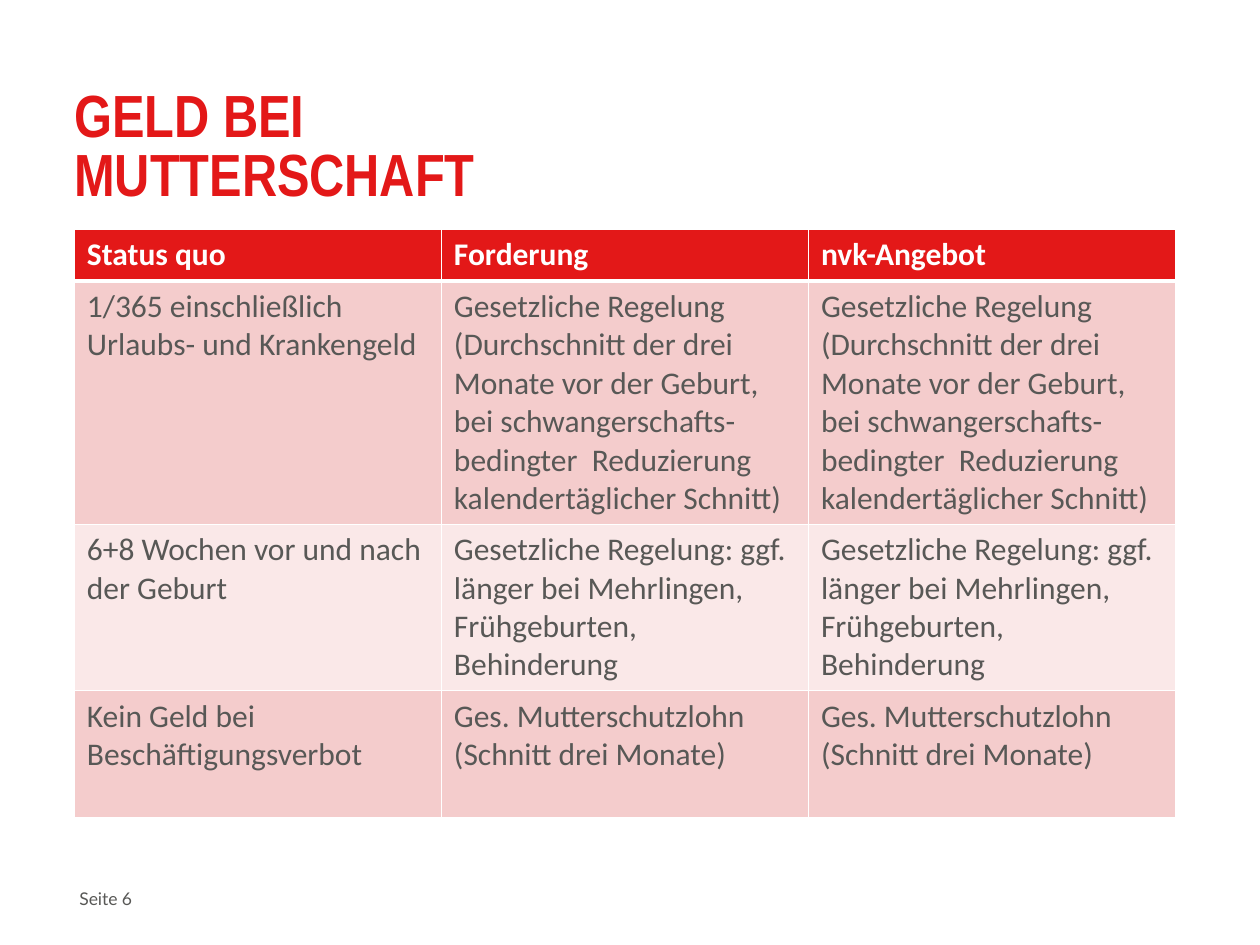
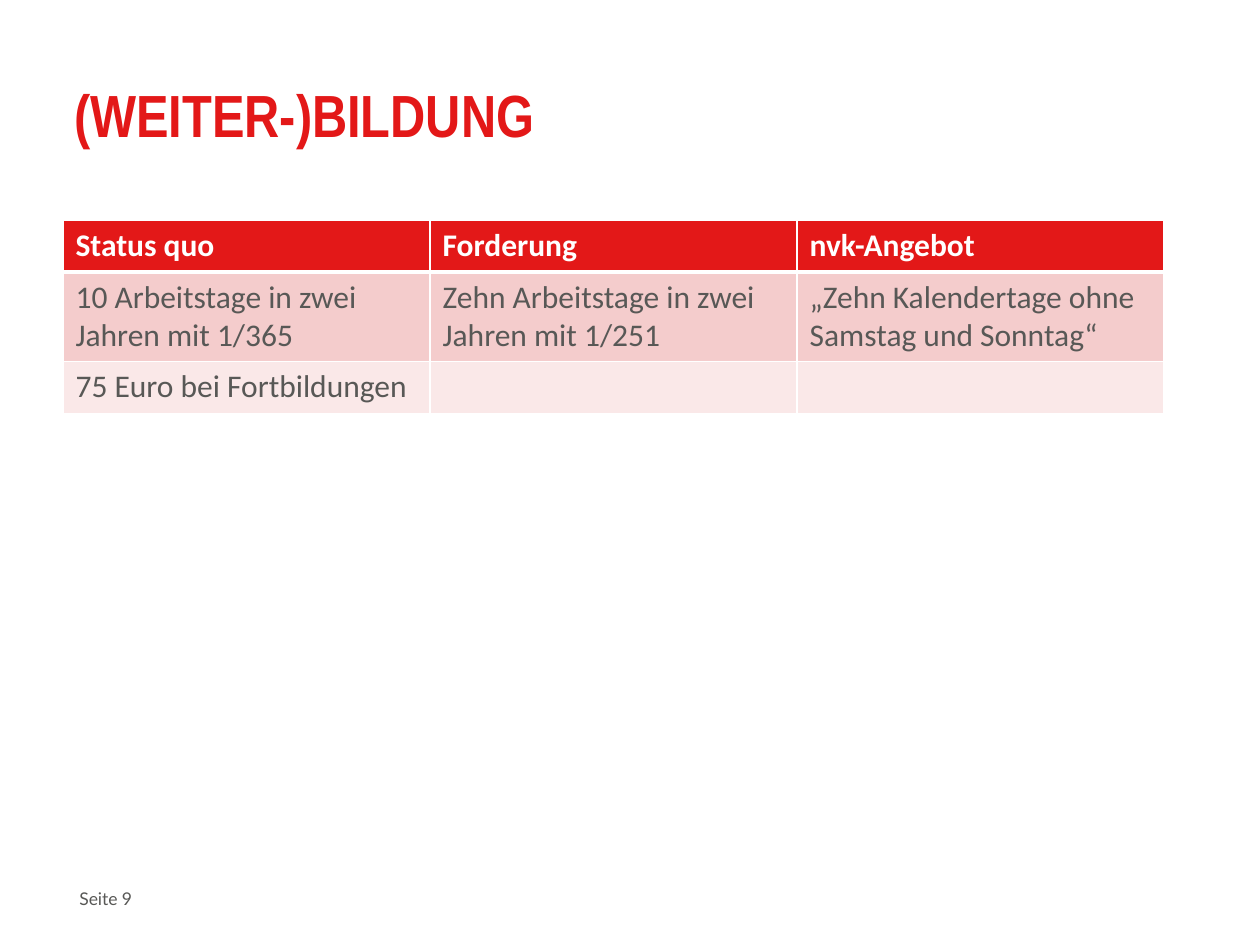
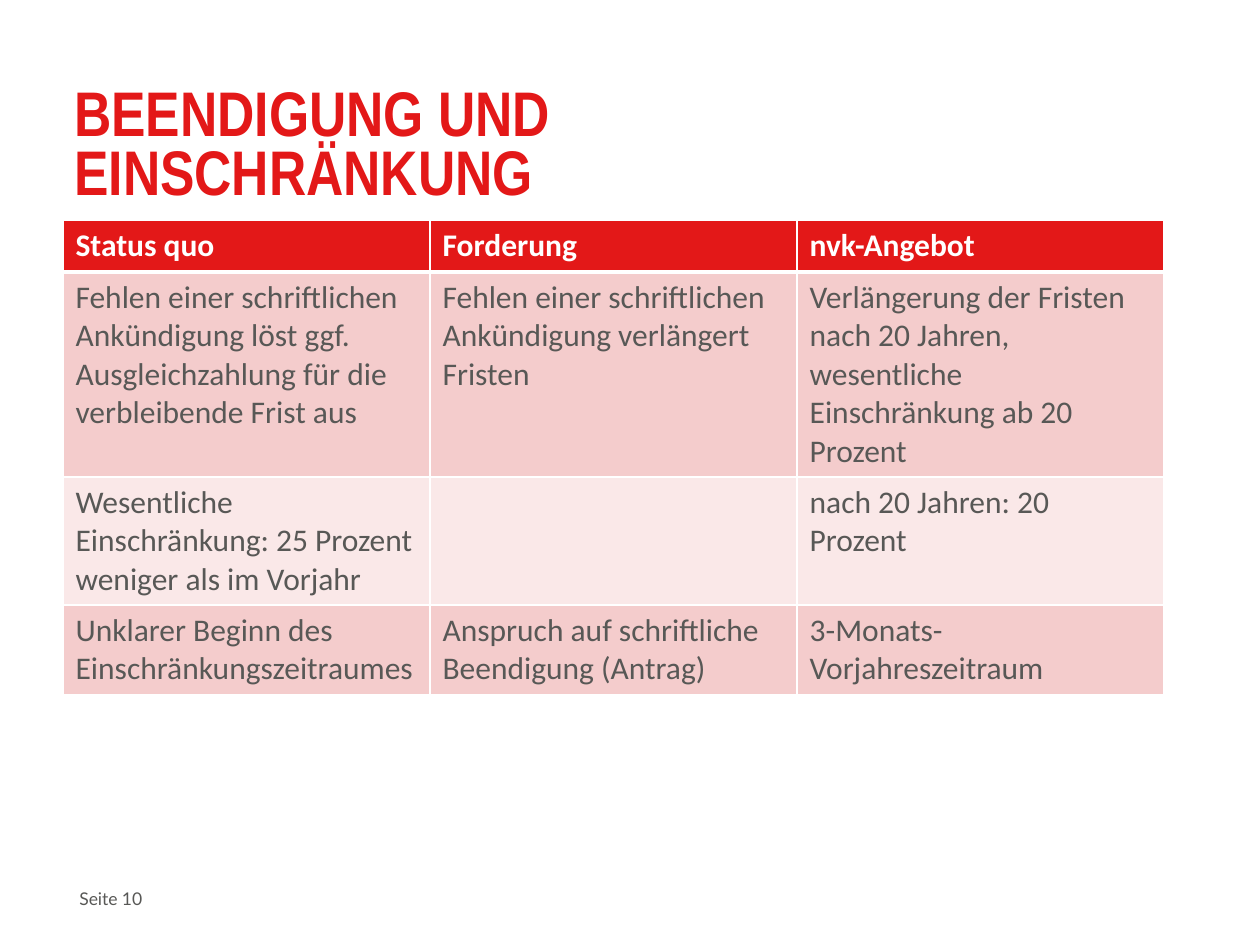
from lxml import etree
from pptx import Presentation
from pptx.dml.color import RGBColor
from pptx.enum import text
from pptx.oxml import ns
from pptx.util import Inches, Pt

COLORS = {"red": "E31818", "rose": "F4CCCC", "pale": "FAE8E8",
          "grey": "585856", "white": "FFFFFF"}
HEADERS = ["Status quo", "Forderung", "nvk-Angebot"]
TITLE_BOX = (0.59, 0.71, 4.8, 0.99)
FOOTER_BOX = (0.63, 7.05, 0.79, 0.17)
TABLE_WIDTH = 8.74

AVERAGE = ("Gesetzliche Regelung (Durchschnitt der drei Monate vor der Geburt, "
           "bei schwangerschafts-bedingter  Reduzierung kalendertäglicher Schnitt)")
LONGER = "Gesetzliche Regelung: ggf. länger bei Mehrlingen, Frühgeburten, Behinderung"
WAGE = "Ges. Mutterschutzlohn (Schnitt drei Monate)"

SLIDES = [
    {"page": 6, "title": "GELD BEI MUTTERSCHAFT", "size": 34, "corner": (0.59, 1.82),
     "lines": [1, 6, 4, 3],
     "rows": [["1/365 einschließlich Urlaubs- und Krankengeld", AVERAGE, AVERAGE],
              ["6+8 Wochen vor und nach der Geburt", LONGER, LONGER],
              ["Kein Geld bei Beschäftigungsverbot", WAGE, WAGE]]},
    {"page": 9, "title": "(WEITER-)BILDUNG", "size": 34, "corner": (0.5, 1.75),
     "lines": [1, 2, 1],
     "rows": [["10 Arbeitstage in zwei Jahren mit 1/365",
               "Zehn Arbeitstage in zwei Jahren mit 1/251",
               "„Zehn Kalendertage ohne Samstag und Sonntag“"],
              ["75 Euro bei Fortbildungen", "", ""]]},
    {"page": 10, "title": "BEENDIGUNG UND EINSCHRÄNKUNG", "size": 36, "corner": (0.5, 1.75),
     "lines": [1, 5, 3, 2],
     "rows": [["Fehlen einer schriftlichen Ankündigung löst ggf. Ausgleichzahlung "
               "für die verbleibende Frist aus",
               "Fehlen einer schriftlichen Ankündigung verlängert Fristen",
               "Verlängerung der Fristen nach 20 Jahren, wesentliche "
               "Einschränkung ab 20 Prozent"],
              ["Wesentliche Einschränkung: 25 Prozent weniger als im Vorjahr", "",
               "nach 20 Jahren: 20 Prozent"],
              ["Unklarer Beginn des Einschränkungszeitraumes",
               "Anspruch auf schriftliche Beendigung (Antrag)",
               "3-Monats-Vorjahreszeitraum"]]},
]


def rgb(name):
    return RGBColor.from_string(COLORS[name])


def style(p, font, size, color, bold=False):
    p.font.name = font
    p.font.size = Pt(size)
    p.font.bold = bold
    p.font.color.rgb = rgb(color)
    for r in p.runs:
        r.font.name = font
        r.font.size = Pt(size)
        r.font.bold = bold
        r.font.color.rgb = rgb(color)


def fill_box(sp, box, content):
    sp.left, sp.top, sp.width, sp.height = map(Inches, box)
    tf = sp.text_frame
    tf.text = content
    tf.word_wrap = True
    tf.auto_size = text.MSO_AUTO_SIZE.NONE
    tf.vertical_anchor = text.MSO_ANCHOR.TOP
    tf.margin_left = tf.margin_top = tf.margin_right = tf.margin_bottom = 0
    p = tf.paragraphs[0]
    p.alignment = text.PP_ALIGN.LEFT
    return p


def add_title(slide, box, content, size):
    p = fill_box(slide.shapes.title, box, content)
    p.line_spacing = Pt(34)
    style(p, "Arial Narrow", size, "red", True)


def add_footer(slide, box, page):
    sp = slide.shapes.add_textbox(*map(Inches, box))
    style(fill_box(sp, box, f"Seite {page}"), "Lato", 10, "grey")


def set_borders(cell, widths):
    tc_pr = cell._tc.get_or_add_tcPr()
    for side, width in zip("LRTB", widths):
        ln = etree.SubElement(tc_pr, ns.qn(f"a:ln{side}"), w=str(Pt(width)))
        fill = etree.SubElement(ln, ns.qn("a:solidFill"))
        etree.SubElement(fill, ns.qn("a:srgbClr"), val=COLORS["white"])


def add_comparison(slide, corner, rows, lines):
    grid = [HEADERS] + rows
    heights = [Inches(0.41 + 0.3 * (n - 1)) for n in lines]
    left, top = map(Inches, corner)
    table = slide.shapes.add_table(len(grid), len(HEADERS), left, top,
                                   Inches(TABLE_WIDTH), sum(heights)).table
    for column in table.columns:
        column.width = Inches(TABLE_WIDTH / len(HEADERS))
    for i, (row, height) in enumerate(zip(grid, heights)):
        table.rows[i].height = height
        header = i == 0
        band = "red" if header else "rose" if i % 2 else "pale"
        for j, content in enumerate(row):
            cell = table.cell(i, j)
            cell.text = content
            set_borders(cell, (1, 1, 3 if i == 1 else 1, 3 if header else 1))
            cell.fill.solid()
            cell.fill.fore_color.rgb = rgb(band)
            style(cell.text_frame.paragraphs[0], "Calibri", 18,
                  "white" if header else "grey", header)


def add_slide(prs, data):
    slide = prs.slides.add_slide(prs.slide_layouts.get_by_name("Title Only"))
    add_footer(slide, FOOTER_BOX, data["page"])
    add_title(slide, TITLE_BOX, data["title"], data["size"])
    add_comparison(slide, data["corner"], data["rows"], data["lines"])


def main():
    prs = Presentation()
    prs.slide_width, prs.slide_height = Inches(10), Inches(7.5)
    for data in SLIDES:
        add_slide(prs, data)
    prs.save("out.pptx")


if __name__ == "__main__":
    main()
